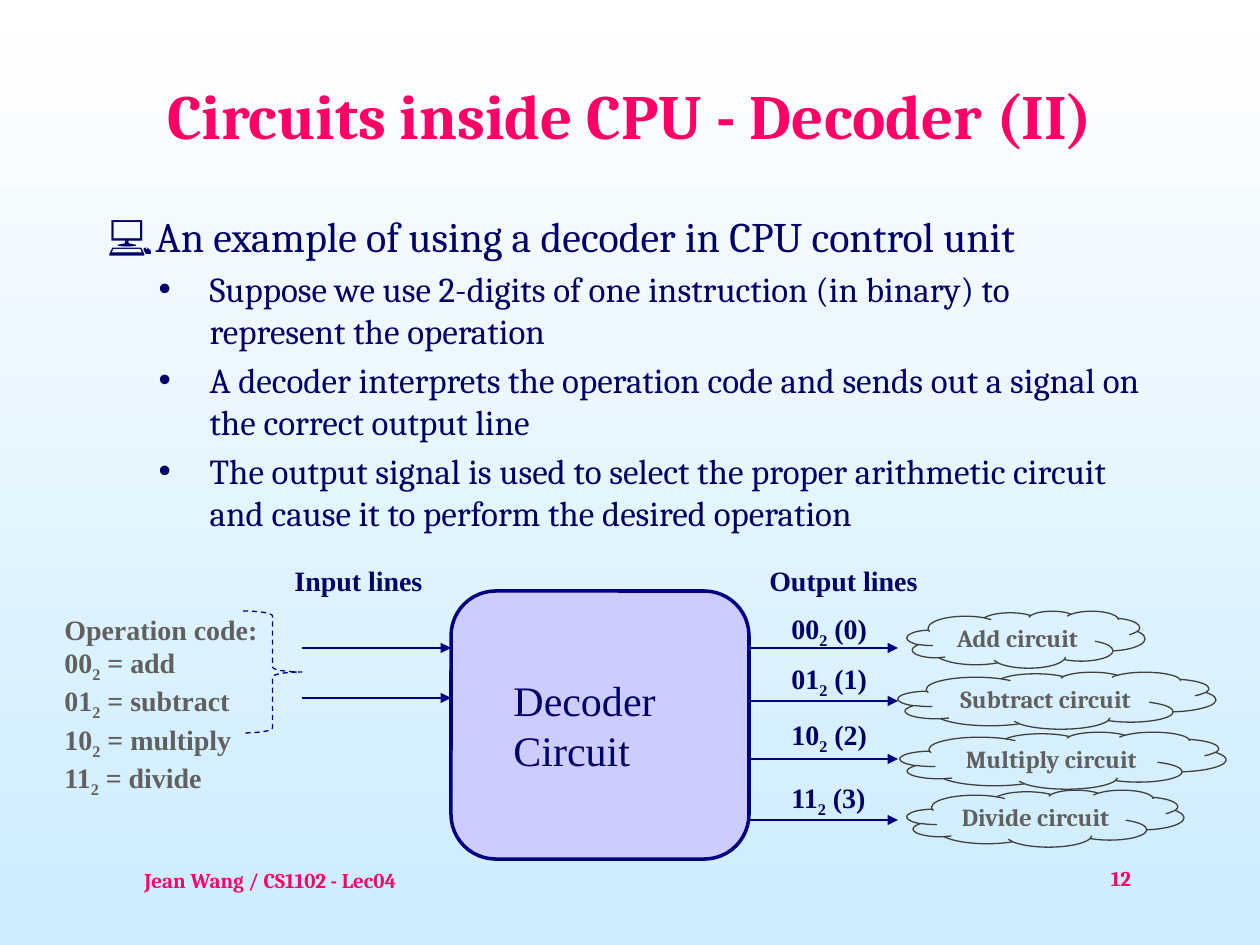
from lxml import etree
from pptx import Presentation
from pptx import util as u
from pptx.dml.color import RGBColor
from pptx.enum import dml, shapes, text
from pptx.oxml import ns

PX = 914400 / 126
PINK = RGBColor(0xFF, 0x00, 0x66)
INK = RGBColor(0x00, 0x00, 0x66)
NAVY = RGBColor(0x00, 0x00, 0x80)
LAVENDER = RGBColor(0xCC, 0xCC, 0xFF)
GREY = RGBColor(0x60, 0x60, 0x60)
DARK_GREY = RGBColor(0x40, 0x40, 0x40)
WHITE = RGBColor(0xFF, 0xFF, 0xFF)
SKY = RGBColor(0xCC, 0xEC, 0xFF)

TITLE_FONT = dict(name="Cambria", size=u.Pt(36), bold=True)
FOOTER_FONT = dict(name="Cambria", size=u.Pt(12), bold=True)
CLOUD_FONT = dict(name="Cambria", size=u.Pt(14), bold=True)
LABEL_FONT = dict(name="Times New Roman", size=u.Pt(16), bold=True)
BLOCK_FONT = dict(name="Times New Roman", size=u.Pt(24), bold=False)

TITLE = "Circuits inside CPU - Decoder (II)"
BULLETS = [
    (0, "An example of using a decoder in CPU control unit"),
    (1, "Suppose we use 2-digits of one instruction (in binary) to represent the operation"),
    (1, "A decoder interprets the operation code and sends out a signal on the correct output line"),
    (1, "The output signal is used to select the proper arithmetic circuit and cause it to perform "
        "the desired operation"),
]
LEVELS = [
    dict(bullet="💻", indent=48, hang=48, size=24, before=0),
    dict(bullet="•", indent=102, hang=51, size=20, before=4),
]
OPERATION_CODES = [["Operation code:"]] + [
    [code, "2", f" = {operation}"]
    for code, operation in [("00", "add"), ("01", "subtract"), ("10", "multiply"), ("11", "divide")]
]
INPUT_ARROWS = [648, 698]
OUTPUTS = [
    ("00", 0, 605, 648),
    ("01", 1, 655, 701),
    ("10", 2, 711, 759),
    ("11", 3, 774, 820),
]
CLOUDS = [
    ("Add circuit", 907, 611, 238),
    ("Subtract circuit", 898, 672, 318),
    ("Multiply circuit", 900, 732, 326),
    ("Divide circuit", 907, 790, 277),
]
TEXTS = [
    ([["Jean Wang / CS1102 - Lec04"]], (132, 861, 380, 63), FOOTER_FONT, PINK, text.PP_ALIGN.LEFT),
    ([["12"]], (990, 859, 262, 63), FOOTER_FONT, PINK, text.PP_ALIGN.CENTER),
    ([["Decoder Circuit"]], (501, 668, 218, 115), BLOCK_FONT, INK, text.PP_ALIGN.LEFT),
    ([["Input lines"]], (282, 557, 169, 47), LABEL_FONT, INK, text.PP_ALIGN.LEFT),
    ([["Output lines"]], (757, 557, 200, 47), LABEL_FONT, INK, text.PP_ALIGN.LEFT),
    (OPERATION_CODES, (52, 606, 231, 183), LABEL_FONT, GREY, text.PP_ALIGN.LEFT),
] + [
    ([[code, "2", f" ({number})"]], (779, top, 118, 47), LABEL_FONT, INK, text.PP_ALIGN.LEFT)
    for code, number, top, _ in OUTPUTS
]


def px(*values):
    return [u.Emu(round(value * PX)) for value in values]


def set_all(target, values):
    for name, value in values.items():
        setattr(target, name, value)


def set_font(font, values, color):
    set_all(font, values)
    font.color.rgb = color


def place(shape, box):
    set_all(shape, dict(zip(("left", "top", "width", "height"), px(*box))))


def write(frame, lines, font, color, align, anchor=text.MSO_ANCHOR.TOP):
    set_all(frame, dict(word_wrap=True, vertical_anchor=anchor, auto_size=text.MSO_AUTO_SIZE.NONE))
    for index, pieces in enumerate(lines):
        paragraph = frame.add_paragraph() if index else frame.paragraphs[0]
        paragraph.alignment = align
        for position, piece in enumerate(pieces):
            run = paragraph.add_run()
            run.text = piece
            set_font(run.font, font, color)
            if position == 1:
                run.font._element.set("baseline", "-25000")


def add_shape(slide, kind, box, line_color, line_width, fill=None):
    shape = slide.shapes.add_shape(kind, *px(*box))
    shape.shadow.inherit = False
    if fill is None:
        shape.fill.background()
    else:
        shape.fill.solid()
        shape.fill.fore_color.rgb = fill
    shape.line.color.rgb = line_color
    shape.line.width = u.Pt(line_width)
    return shape


def add_arrow(slide, start, end, y):
    arrow = slide.shapes.add_connector(shapes.MSO_CONNECTOR.STRAIGHT, *px(start, y, end, y))
    arrow.line.color.rgb = NAVY
    arrow.line.width = u.Pt(1.5)
    etree.SubElement(arrow.line._get_or_add_ln(), ns.qn("a:tailEnd"), type="triangle")
    etree.SubElement(arrow._element.spPr, ns.qn("a:effectLst"))


def fill_body(body):
    place(body, (95, 204, 1070, 645))
    frame = body.text_frame
    frame.auto_size = text.MSO_AUTO_SIZE.NONE
    for index, (level, wording) in enumerate(BULLETS):
        style = LEVELS[level]
        paragraph = frame.add_paragraph() if index else frame.paragraphs[0]
        paragraph.level = level
        paragraph.space_before = u.Pt(style["before"])
        properties = paragraph._p.get_or_add_pPr()
        indent, hang = px(style["indent"], style["hang"])
        properties.set("marL", str(indent))
        properties.set("indent", str(-hang))
        etree.SubElement(properties, ns.qn("a:buChar"), char=style["bullet"])
        run = paragraph.add_run()
        run.text = wording
        set_font(run.font, dict(name="Cambria", size=u.Pt(style["size"])), INK)


def main():
    presentation = Presentation()
    set_all(presentation, dict(zip(("slide_width", "slide_height"), px(1260, 945))))
    slide = presentation.slides.add_slide(presentation.slide_layouts[1])

    background = slide.background.fill
    background.gradient()
    background.gradient_angle = 270
    for stop, color in zip(background.gradient_stops, (WHITE, SKY)):
        stop.color.rgb = color

    title, body = slide.placeholders
    place(title, (95, 35, 1070, 158))
    write(title.text_frame, [[TITLE]], TITLE_FONT, PINK, text.PP_ALIGN.CENTER, text.MSO_ANCHOR.MIDDLE)
    fill_body(body)

    add_shape(slide, shapes.MSO_SHAPE.ROUNDED_RECTANGLE, (451, 591, 298, 268), NAVY, 2, LAVENDER)
    brace = add_shape(slide, shapes.MSO_SHAPE.RIGHT_BRACE, (243, 611, 59, 122), NAVY, 0.75)
    brace.line.dash_style = dml.MSO_LINE.DASH
    for y in INPUT_ARROWS:
        add_arrow(slide, 302, 451, y)
    for *_, y in OUTPUTS:
        add_arrow(slide, 749, 898, y)

    for lines, box, font, color, align in TEXTS:
        write(slide.shapes.add_textbox(*px(*box)).text_frame, lines, font, color, align)
    for name, left, top, width in CLOUDS:
        cloud = add_shape(slide, shapes.MSO_SHAPE.CLOUD, (left, top, width, 57), DARK_GREY, 0.75)
        write(cloud.text_frame, [[name]], CLOUD_FONT, GREY, text.PP_ALIGN.CENTER, text.MSO_ANCHOR.MIDDLE)

    presentation.save("out.pptx")


if __name__ == "__main__":
    main()
